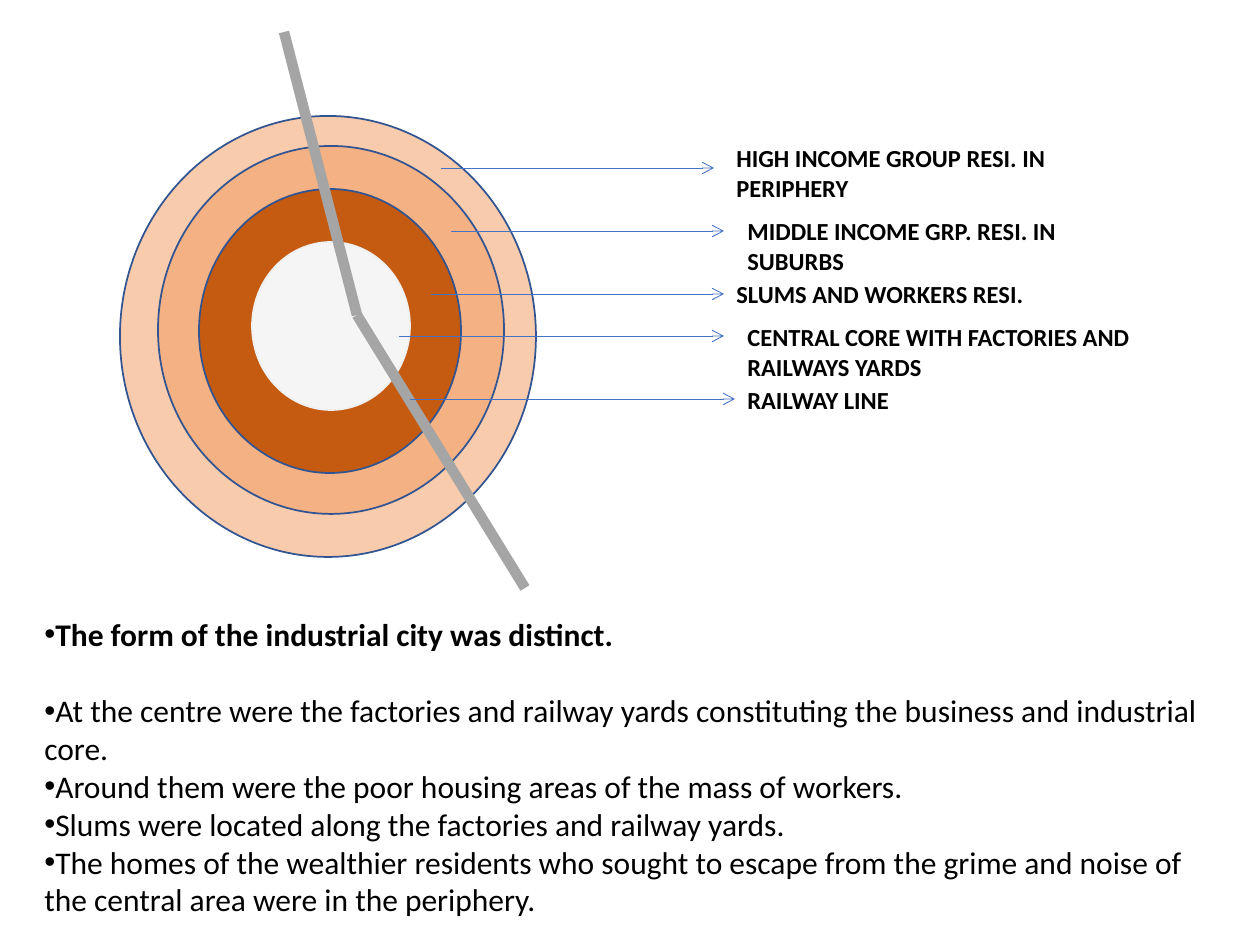
from lxml import etree
from pptx import Presentation
from pptx import util as u
from pptx.dml.color import RGBColor
from pptx.enum import shapes, text
from pptx.oxml import ns

SCALE = 914400 / 126
FONT = "Calibri"
BLACK = RGBColor(0x00, 0x00, 0x00)
OUTLINE = RGBColor(0x32, 0x54, 0x91)
OUTER = RGBColor(0xF8, 0xCB, 0xAD)
MIDDLE = RGBColor(0xF4, 0xB1, 0x83)
INNER = RGBColor(0xC5, 0x5A, 0x11)
CORE = RGBColor(0xF5, 0xF5, 0xF5)
CORE_EDGE = RGBColor(0xF1, 0xF0, 0xF0)
RAIL = RGBColor(0xA5, 0xA5, 0xA5)
ARROW = RGBColor(0x44, 0x72, 0xC4)

RINGS = [
    (0, 84, 416, 441, OUTER, OUTLINE),
    (38, 114, 346, 368, MIDDLE, OUTLINE),
    (79, 157, 262, 284, INNER, OUTLINE),
    (132, 210, 158, 168, CORE, CORE_EDGE),
]
RAIL_POINTS = [(164, 0), (237, 283), (405, 556)]
ZONES = [
    ("HIGH INCOME GROUP RESI. IN PERIPHERY", 42, 315, 31, 325, 0, 388, 72),
    ("MIDDLE INCOME GRP. RESI. IN SUBURBS", 52, 325, 94, 336, 73, 388, 72),
    ("SLUMS AND WORKERS RESI.", 32, 325, 157, 325, 136, 483, 43),
    ("CENTRAL CORE WITH FACTORIES AND RAILWAYS YARDS", 0, 325, 199, 336, 179, 441, 72),
    ("RAILWAY LINE", 11, 336, 262, 336, 242, 388, 43),
]
HEADING = "The form of the industrial city was distinct."
POINTS = [
    "At the centre were the factories and railway yards constituting the business and industrial core.",
    "Around them were the poor housing areas of the mass of workers.",
    "Slums were located along the factories and railway yards.",
    "The homes of the wealthier residents who sought to escape from the grime and noise of "
    "the central area were in the periphery.",
]


def px(length):
    return u.Emu(round(length * SCALE))


def apply_format(target, values):
    for name, value in values.items():
        setattr(target, name, value)


def add_line(slide, start, end, color, width, arrow=False):
    line = slide.shapes.add_connector(
        shapes.MSO_CONNECTOR.STRAIGHT, *map(px, (*start, *end)))
    line.line.color.rgb = color
    line.line.width = u.Pt(width)
    if arrow:
        outline = line.line._get_or_add_ln()
        etree.SubElement(outline, ns.qn("a:tailEnd"), type="arrow")
    etree.SubElement(line._element.spPr, ns.qn("a:effectLst"))


def add_text_frame(slide, left, top, width, height):
    frame = slide.shapes.add_textbox(*map(px, (left, top, width, height))).text_frame
    apply_format(frame, {
        "word_wrap": True,
        "auto_size": text.MSO_AUTO_SIZE.SHAPE_TO_FIT_TEXT,
    })
    return frame


def write_paragraph(paragraph, words, size, bold):
    run = paragraph.add_run()
    run.text = words
    apply_format(run.font, {"name": FONT, "size": u.Pt(size), "bold": bold})
    run.font.color.rgb = BLACK


def add_bullet(paragraph):
    properties = paragraph._p.get_or_add_pPr()
    properties.set("marL", "0")
    properties.set("indent", "0")
    etree.SubElement(properties, ns.qn("a:buFont"), typeface="Arial")
    etree.SubElement(properties, ns.qn("a:buChar"), char="•")


def draw_city(slide, left, top):
    for x, y, width, height, fill, edge in RINGS:
        ring = slide.shapes.add_shape(
            shapes.MSO_SHAPE.OVAL, *map(px, (left + x, top + y, width, height)))
        ring.shadow.inherit = False
        ring.fill.solid()
        ring.fill.fore_color.rgb = fill
        ring.line.color.rgb = edge
        ring.line.width = u.Pt(1)
    track = [(left + x, top + y) for x, y in RAIL_POINTS]
    for start, end in zip(track, track[1:]):
        add_line(slide, start, end, RAIL, 6)


def draw_labels(slide, left, top):
    for words, start, end, level, x, y, width, height in ZONES:
        add_line(slide, (left + start, top + level), (left + end, top + level),
                 ARROW, 0.5, arrow=True)
        frame = add_text_frame(slide, left + x, top + y, width, height)
        write_paragraph(frame.paragraphs[0], words, 14, True)


def draw_notes(slide, left, top, width, height):
    frame = add_text_frame(slide, left, top, width, height)
    heading = frame.paragraphs[0]
    heading.space_after = u.Pt(22)
    write_paragraph(heading, HEADING, 18, True)
    for words in POINTS:
        write_paragraph(frame.add_paragraph(), words, 18, False)
    for paragraph in frame.paragraphs:
        add_bullet(paragraph)


def main():
    presentation = Presentation()
    apply_format(presentation, {"slide_width": px(1260), "slide_height": px(945)})
    slide = presentation.slides.add_slide(presentation.slide_layouts.get_by_name("Blank"))
    draw_city(slide, 120, 32)
    draw_labels(slide, 399, 137)
    draw_notes(slide, 32, 609, 1197, 318)
    presentation.save("out.pptx")


if __name__ == "__main__":
    main()
